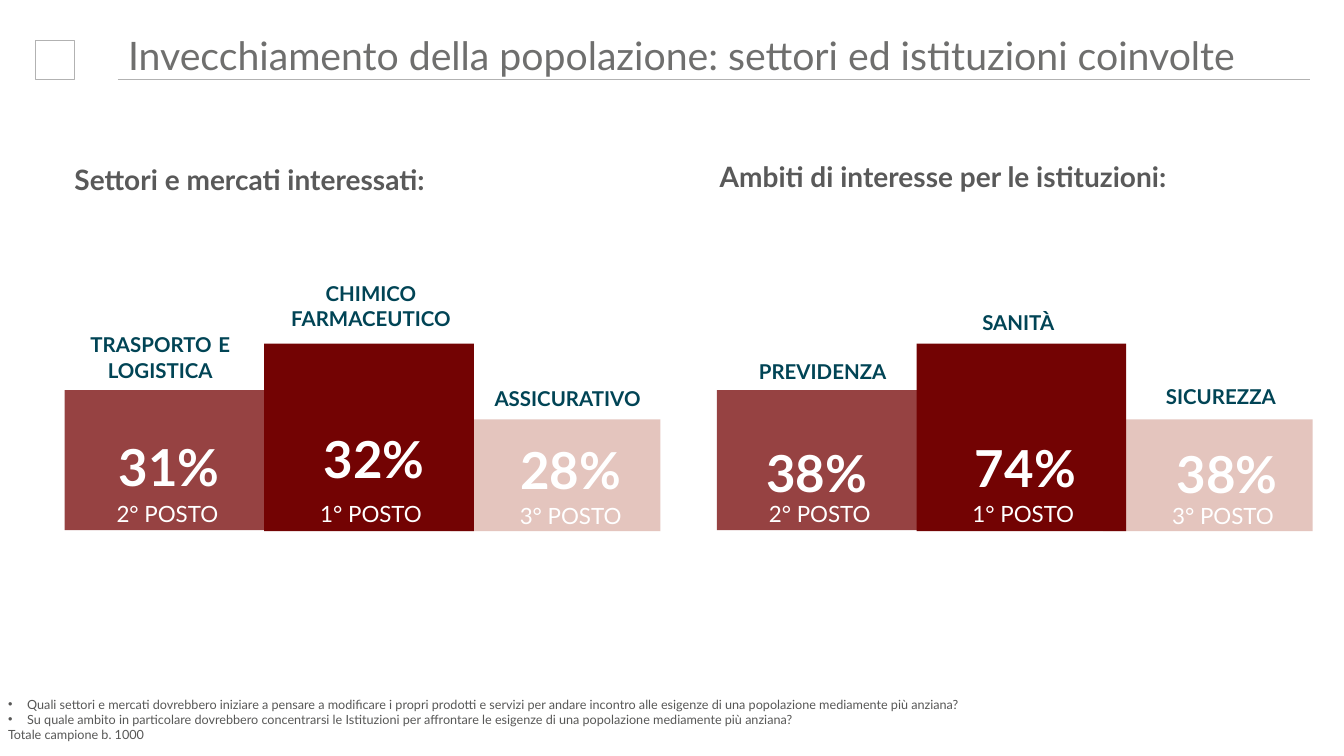
import dataclasses
import typing

import pptx
import pptx.dml.color
import pptx.enum.shapes
import pptx.enum.text
import pptx.oxml
import pptx.oxml.ns
import pptx.util

SCALE = 9144  # EMU per px, 100 px to the inch
qn = pptx.oxml.ns.qn
ALIGN = pptx.enum.text.PP_ALIGN
SHAPE = pptx.enum.shapes.MSO_SHAPE


class Style(typing.NamedTuple):
    size: float
    color: str
    bold: bool = False


@dataclasses.dataclass(frozen=True)
class Theme:
    font: str = "Lato"
    dark: str = "730303"
    pale: str = "CA8D7F"
    rule: str = "B2B2B2"
    title: Style = Style(28, "6F6F6E")
    head: Style = Style(20, "595959", True)
    label: Style = Style(14.6, "014455", True)
    gap: Style = Style(18, "595959")
    share: Style = Style(36.4, "FFFFFF", True)
    rank: Style = Style(16, "FFFFFF")
    note: Style = Style(9, "575756")


THEME = Theme()


class Box(typing.NamedTuple):
    left: int
    top: int
    width: int
    height: int


class Step(typing.NamedTuple):
    """A podium step; lefts are counted from the podium's left edge."""
    rank: str
    bar: Box
    text: Box
    color: str
    alpha: int


class Entry(typing.NamedTuple):
    label: str
    place: Box
    share: str
    left: int
    top: int


class Podium(typing.NamedTuple):
    left: int
    head: str
    place: Box
    entries: tuple[Entry, ...]


STEPS = (
    Step("2° POSTO", Box(0, 387, 208, 139), Box(-7, 491, 218, 37), THEME.dark, 75),
    Step("3° POSTO", Box(383, 416, 208, 111), Box(393, 493, 218, 37), THEME.pale, 50),
    Step("1° POSTO", Box(198, 341, 208, 186), Box(195, 491, 218, 37), THEME.dark, 100),
)

PODIUMS = (
    Podium(64, "Settori e mercati interessati:", Box(64, 156, 504, 44), (
        Entry("TRASPORTO E\nLOGISTICA", Box(57, 320, 204, 65), "31%", 66, 427),
        Entry("ASSICURATIVO", Box(454, 378, 218, 35), "28%", 464, 430),
        Entry("CHIMICO\nFARMACEUTICO", Box(244, 274, 248, 59), "32%", 269, 419),
    )),
    Podium(711, "Ambiti di interesse per le istituzioni:", Box(704, 153, 504, 44), (
        Entry("PREVIDENZA", Box(707, 351, 218, 35), "38%", 708, 433),
        Entry("SICUREZZA", Box(1102, 376, 218, 35), "38%", 1115, 434),
        Entry("SANITÀ", Box(886, 303, 248, 35), "74%", 915, 428),
    )),
)

NOTES = (
    "Quali settori e mercati dovrebbero iniziare a pensare a modificare i propri prodotti "
    "e servizi per andare incontro alle esigenze di una popolazione mediamente più anziana?",
    "Su quale ambito in particolare dovrebbero concentrarsi le Istituzioni per affrontare "
    "le esigenze di una popolazione mediamente più anziana?",
    "Totale campione b. 1000",
)


def px(value: int) -> pptx.util.Emu:
    return pptx.util.Emu(value * SCALE)


def paint(color: str) -> pptx.dml.color.RGBColor:
    return pptx.dml.color.RGBColor.from_string(color)


def place(shape: typing.Any, box: Box) -> None:
    for name, value in box._asdict().items():
        setattr(shape, name, px(value))


def add_run(para: typing.Any, text: str, style: Style) -> None:
    run = para.add_run()
    run.text = text
    form = {"name": THEME.font, "size": pptx.util.Pt(style.size), "bold": style.bold}
    for name, value in form.items():
        setattr(run.font, name, value)
    run.font.color.rgb = paint(style.color)


def set_frame(frame: typing.Any) -> None:
    form = {
        "word_wrap": True,
        "auto_size": pptx.enum.text.MSO_AUTO_SIZE.NONE,
        "vertical_anchor": pptx.enum.text.MSO_ANCHOR.TOP,
    }
    for name, value in form.items():
        setattr(frame, name, value)


def add_text(slide: typing.Any, text: str, box: Box, style: Style,
             align: typing.Any = ALIGN.CENTER) -> None:
    shape = slide.shapes.add_textbox(*map(px, box))
    frame = shape.text_frame
    set_frame(frame)
    for index, line in enumerate(text.split("\n")):
        para = frame.add_paragraph() if index else frame.paragraphs[0]
        para.alignment = align
        if style is THEME.label:
            for part in filter(None, line.partition(" ")):
                add_run(para, part, THEME.gap if part == " " else style)
        else:
            add_run(para, line, style)


def add_bar(slide: typing.Any, box: Box, color: str, alpha: int) -> None:
    bar = slide.shapes.add_shape(SHAPE.RECTANGLE, *map(px, box))
    bar.shadow.inherit = False
    bar.fill.solid()
    bar.fill.fore_color.rgb = paint(color)
    bar.line.fill.background()
    if alpha < 100:
        tint = bar.element.spPr.find(".//" + qn("a:srgbClr"))
        node = pptx.oxml.parse_xml(
            f'<a:alpha {pptx.oxml.ns.nsdecls("a")} val="{alpha * 1000}"/>')
        tint.append(node)


def add_podium(slide: typing.Any, podium: Podium) -> None:
    for step in STEPS:
        box = step.bar._replace(left=podium.left + step.bar.left)
        add_bar(slide, box, step.color, step.alpha)
    for step, entry in zip(STEPS, podium.entries):
        add_text(slide, entry.label, entry.place, THEME.label)
        box = step.text._replace(left=podium.left + step.text.left)
        add_text(slide, step.rank, box, THEME.rank)
        add_text(slide, entry.share, Box(entry.left, entry.top, 204, 71), THEME.share)
    add_text(slide, podium.head, podium.place, THEME.head, ALIGN.LEFT)


def add_title(slide: typing.Any) -> None:
    title = slide.shapes.title
    place(title, Box(117, 26, 1194, 57))
    set_frame(title.text_frame)
    para = title.text_frame.paragraphs[0]
    para.alignment = ALIGN.LEFT
    add_run(para, "Invecchiamento della popolazione: settori ed istituzioni coinvolte",
            THEME.title)
    rule = slide.shapes.add_connector(
        pptx.enum.shapes.MSO_CONNECTOR.STRAIGHT, *map(px, (117, 79, 1299, 79)))
    rule.line.color.rgb = paint(THEME.rule)
    rule.line.width = pptx.util.Pt(0.54)
    pptx.oxml.ns  # namespace map used for the effect list below
    rule.element.spPr.append(
        pptx.oxml.parse_xml(f'<a:effectLst {pptx.oxml.ns.nsdecls("a")}/>'))


def add_badge(slide: typing.Any) -> None:
    badge = slide.shapes.add_shape(SHAPE.RECTANGLE, *map(px, Box(35, 40, 39, 39)))
    badge.shadow.inherit = False
    badge.fill.background()
    badge.line.color.rgb = paint(THEME.rule)
    badge.line.width = pptx.util.Pt(0.54)


def add_notes(slide: typing.Any) -> None:
    """Fill the body placeholder; its last line has no bullet."""
    body = slide.placeholders[1]
    place(body, Box(0, 687, 1333, 53))
    frame = body.text_frame
    set_frame(frame)
    for side, value in {"left": 8, "top": 4, "right": 8, "bottom": 4}.items():
        setattr(frame, f"margin_{side}", px(value))
    for index, text in enumerate(NOTES):
        para = frame.add_paragraph() if index else frame.paragraphs[0]
        listed = index < len(NOTES) - 1
        props = para._p.get_or_add_pPr()
        props.set("marL", str(px(19 * listed)))
        props.set("indent", str(px(-19 * listed)))
        mark = 'buChar {} char="•"' if listed else "buNone {}"
        props.append(pptx.oxml.parse_xml(
            f'<a:{mark.format(pptx.oxml.ns.nsdecls("a"))}/>'))
        para.space_before = pptx.util.Pt(0)
        add_run(para, text, THEME.note)


def main() -> None:
    deck = pptx.Presentation()
    deck.slide_width, deck.slide_height = px(1333), px(750)
    slide = deck.slides.add_slide(deck.slide_layouts[1])
    add_title(slide)
    add_badge(slide)
    for podium in PODIUMS:
        add_podium(slide, podium)
    add_notes(slide)
    deck.save("out.pptx")


if __name__ == "__main__":
    main()
